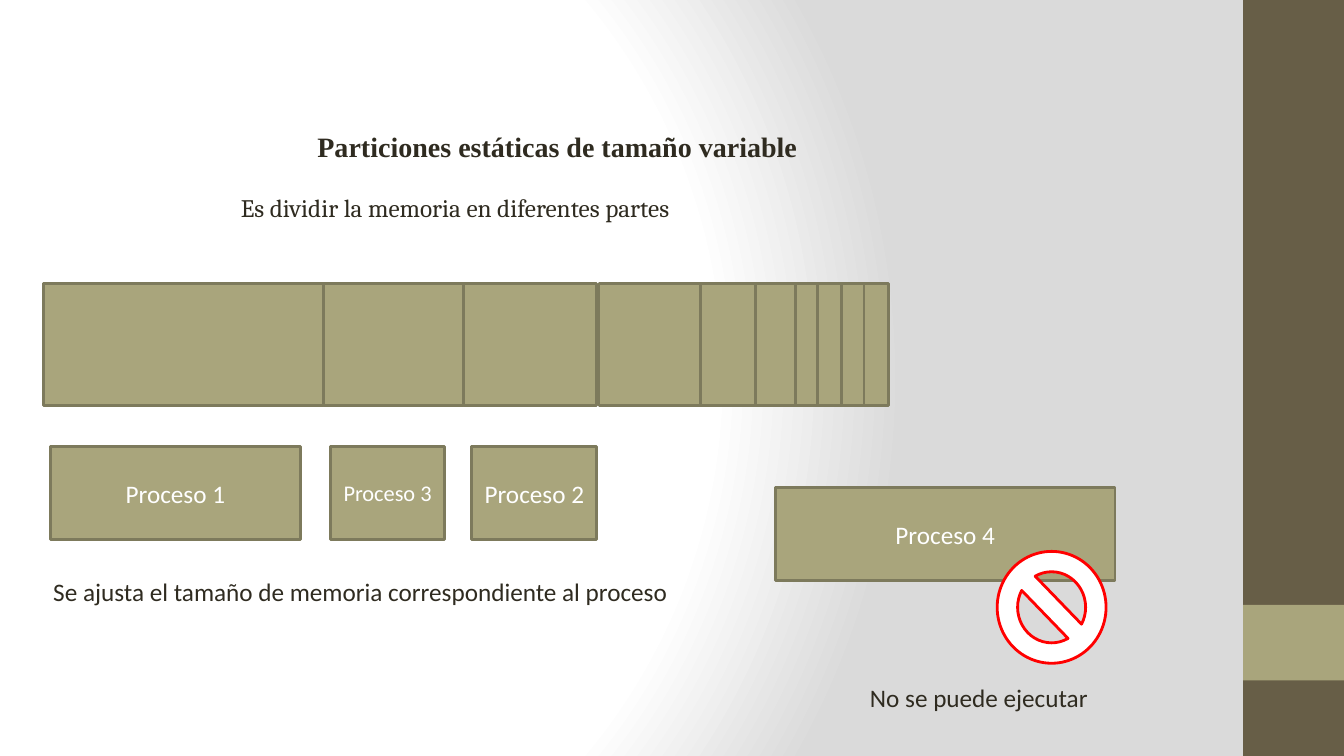
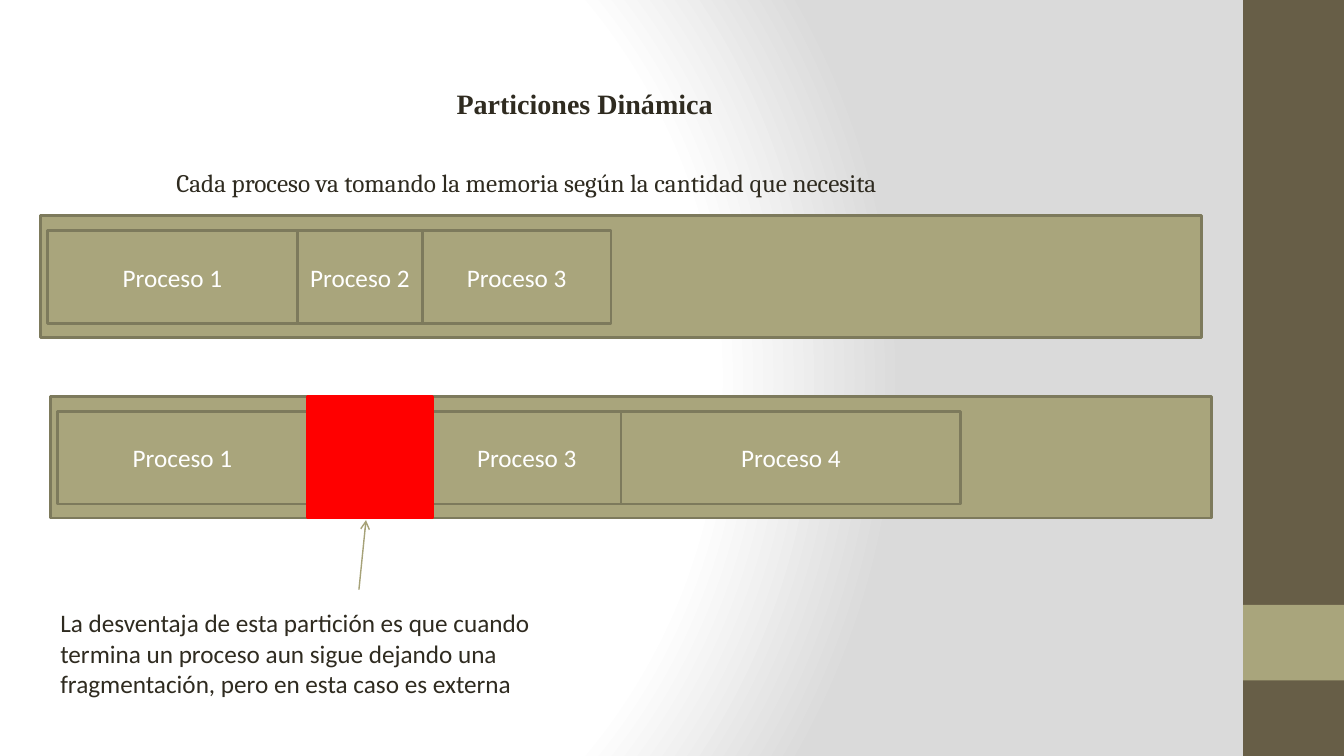
import pptx
import pptx.dml.color
import pptx.enum.shapes
import pptx.enum.text
import pptx.oxml
import pptx.oxml.ns
import pptx.util
from pptx.util import Inches

COLORS = {
    "ink": "2F2B20",
    "white": "FFFFFF",
    "shade": "DADADA",
    "band": "675E47",
    "olive": "A9A57C",
    "outline": "7D7A5C",
    "arrow": "A6A278",
    "red": "FF0000",
}
TITLE = {"font": "Times New Roman", "size": 20, "bold": True, "wrap": False}
SUBTITLE = {"font": "Cambria", "wrap": False}
BAR_HEIGHT = 1.21
PROCESS_HEIGHT = 0.92
PROCESS_WIDTHS = {"Proceso 1": 2.48, "Proceso 2": 1.24, "Proceso 3": 1.87, "Proceso 4": 3.37}
SHAPES = pptx.enum.shapes.MSO_SHAPE


def color(name):
    return pptx.dml.color.RGBColor.from_string(COLORS[name])


def set_background(master):
    """Give the master a circular gradient shared by all slides."""
    master.background.fill.solid()
    properties = master.element.find(".//" + pptx.oxml.ns.qn("p:bgPr"))
    stops = "".join(
        f'<a:gs pos="{position * 1000}"><a:srgbClr val="{COLORS[name]}"/></a:gs>'
        for position, name in ((0, "white"), (75, "white"), (100, "shade"))
    )
    gradient = pptx.oxml.parse_xml(
        f'<a:gradFill {pptx.oxml.ns.nsdecls("a")} rotWithShape="1"><a:gsLst>{stops}</a:gsLst>'
        '<a:path path="circle"><a:fillToRect l="20000" t="50000" r="100000" b="50000"/></a:path>'
        "</a:gradFill>"
    )
    properties.replace(properties[0], gradient)


def write_text(shape, text, font="Calibri", size=18, ink="ink", bold=False, centered=False, wrap=True):
    frame = shape.text_frame
    frame.word_wrap = wrap
    paragraph = frame.paragraphs[0]
    paragraph.text = text
    paragraph.font.name = font
    paragraph.font.size = pptx.util.Pt(size)
    paragraph.font.bold = bold
    paragraph.font.color.rgb = color(ink)
    if centered:
        paragraph.alignment = pptx.enum.text.PP_ALIGN.CENTER
        frame.vertical_anchor = pptx.enum.text.MSO_ANCHOR.MIDDLE


def add_label(slide, left, top, width, height, text, **text_format):
    label = slide.shapes.add_textbox(Inches(left), Inches(top), Inches(width), Inches(height))
    write_text(label, text, **text_format)
    label.text_frame.auto_size = pptx.enum.text.MSO_AUTO_SIZE.SHAPE_TO_FIT_TEXT


def add_box(slide, left, top, width, height, text="", fill="olive", line="outline",
            preset=SHAPES.RECTANGLE, size=18):
    box = slide.shapes.add_shape(preset, Inches(left), Inches(top), Inches(width), Inches(height))
    box.shadow.inherit = False
    box.fill.solid()
    box.fill.fore_color.rgb = color(fill)
    if line:
        box.line.color.rgb = color(line)
        box.line.width = pptx.util.Pt(2)
    else:
        box.line.fill.background()
    if text:
        write_text(box, text, size=size, ink="white", centered=True)


def add_arrow(slide, start, end):
    arrow = slide.shapes.add_connector(
        pptx.enum.shapes.MSO_CONNECTOR.STRAIGHT, *(Inches(value) for value in start + end)
    )
    arrow.line.color.rgb = color("arrow")
    arrow.line.width = pptx.util.Pt(1)
    namespace = pptx.oxml.ns.nsdecls("a")
    arrow.line._get_or_add_ln().append(pptx.oxml.parse_xml(f'<a:tailEnd {namespace} type="arrow"/>'))
    arrow.element.spPr.append(pptx.oxml.parse_xml(f"<a:effectLst {namespace}/>"))


def add_side_band(slide, left=12.33, width=1):
    add_box(slide, left, 0, width, 7.5, fill="band", line=None)
    add_box(slide, left, 6, width, 0.75, line=None)


def add_partitions(slide, left, top, widths):
    for width in widths:
        add_box(slide, left, top, width, BAR_HEIGHT)
        left += width


def add_memory_bar(slide, left, top, processes, ended=None):
    """Draw processes side by side in a bar; the ended one leaves a red hole."""
    add_box(slide, left, top, 11.52, BAR_HEIGHT)
    process_left = left + 0.07
    hole_left = None
    for process in processes:
        width = PROCESS_WIDTHS[process]
        if process == ended:
            hole_left = process_left
        else:
            add_box(slide, process_left, top + 0.15, width, PROCESS_HEIGHT, process)
        process_left += width
    if hole_left is not None:
        add_box(slide, hole_left, top, PROCESS_WIDTHS[ended], BAR_HEIGHT, fill="red", line="red")


def add_rejected_process(slide, left, top):
    add_box(slide, left, top, PROCESS_WIDTHS["Proceso 4"], PROCESS_HEIGHT, "Proceso 4")
    add_box(slide, left + 2.2, top + 0.63, 1.08, 1.11, fill="white", line="red",
            preset=SHAPES.NO_SYMBOL)
    add_label(slide, left + 0.84, top + 1.88, 2.49, 0.4, "No se puede ejecutar")


def build_static_partitions(slide):
    add_side_band(slide)
    add_label(slide, 3.05, 1.24, 5.06, 0.44, "Particiones estáticas de tamaño variable", **TITLE)
    add_label(slide, 2.29, 1.86, 4.77, 0.4, "Es dividir la memoria en diferentes partes", **SUBTITLE)
    add_partitions(slide, 0.43, 2.81, (2.78, 1.39, 1.32))
    add_partitions(slide, 5.94, 2.81, (1.01, 0.54, 0.4, 0.22, 0.24, 0.22, 0.24))
    for left, width, process, size in (
        (0.5, 2.48, "Proceso 1", 18),
        (3.28, 1.13, "Proceso 3", 16),
        (4.68, 1.24, "Proceso 2", 18),
    ):
        add_box(slide, left, 4.43, width, PROCESS_HEIGHT, process, size=size)
    add_label(slide, 0.43, 5.67, 6.94, 0.4,
              "Se ajusta el tamaño de memoria correspondiente al proceso")
    add_rejected_process(slide, 7.69, 4.84)


def build_dynamic_partitions(slide):
    add_side_band(slide)
    add_label(slide, 4.43, 0.81, 2.76, 0.44, "Particiones Dinámica", **TITLE)
    add_label(slide, 1.65, 1.61, 7.62, 0.4,
              "Cada proceso va tomando la memoria según la cantidad que necesita", **SUBTITLE)
    processes = list(PROCESS_WIDTHS)
    add_memory_bar(slide, 0.4, 2.14, processes[:3])
    add_memory_bar(slide, 0.5, 3.93, processes, ended="Proceso 2")
    add_arrow(slide, (3.56, 5.85), (3.63, 5.16))
    add_label(slide, 0.5, 5.98, 5.1, 1.01,
              "La desventaja de esta partición es que cuando termina un proceso aun sigue "
              "dejando una fragmentación, pero en esta caso es externa")


def main():
    presentation = pptx.Presentation()
    presentation.slide_width = Inches(13.33)
    presentation.slide_height = Inches(7.5)
    set_background(presentation.slide_master)
    blank_layout = presentation.slide_layouts[6]
    for build in (build_static_partitions, build_dynamic_partitions):
        build(presentation.slides.add_slide(blank_layout))
    presentation.save("out.pptx")


if __name__ == "__main__":
    main()
